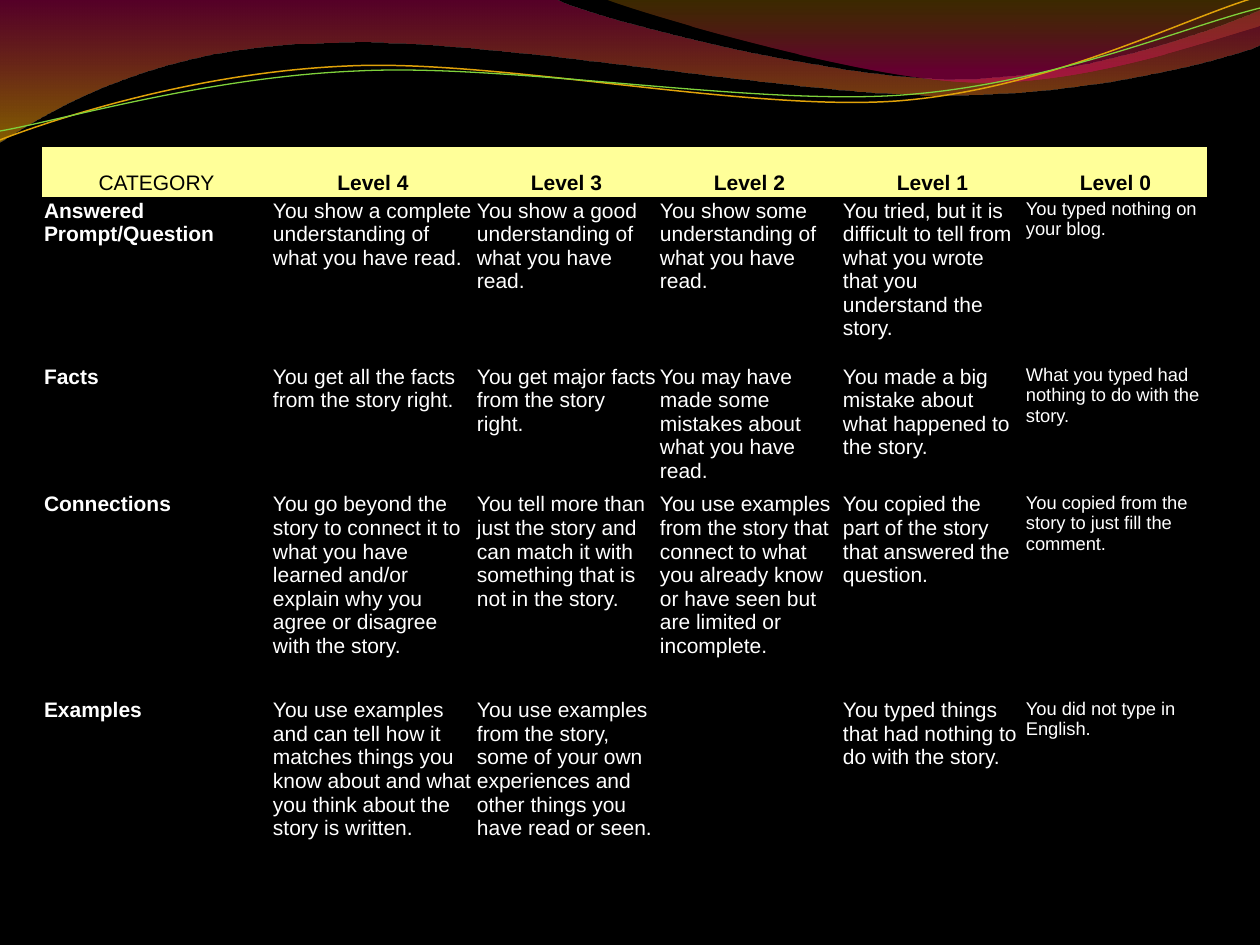
"""Build a slide with a wavy header and a rubric table for reading responses."""
from math import cos, radians, sin

from lxml import etree
from pptx import Presentation
from pptx.dml.color import RGBColor
from pptx.enum.text import MSO_ANCHOR, PP_ALIGN
from pptx.oxml.ns import qn
from pptx.oxml.xmlchemy import OxmlElement
from pptx.util import Pt

PX = 914400 / 126
FONT = "Arial"
NO_GRID_STYLE = "{2D5ABB26-0587-4C30-8999-92F81FD0307C}"
COLORS = {
    "black": "000000", "white": "FFFFFF", "header": "FFFF99",
    "plum": "BD0059", "amber": "F0AB00", "olive": "C38B00", "magenta": "E1006B",
    "gold": "E0A209", "green": "7FD13B",
}


def rgb(name):
    return RGBColor.from_string(COLORS[name])


def add_wave(slide, start, segments, close, tilt=0, center=(0, 0)):
    flat = list(start) + [value for segment in segments for value in segment]
    cx, cy = center
    turn_cos, turn_sin = cos(radians(-tilt)), sin(radians(-tilt))
    points = [((cx + (x - cx) * turn_cos - (y - cy) * turn_sin) * PX,
               (cy + (x - cx) * turn_sin + (y - cy) * turn_cos) * PX)
              for x, y in zip(flat[::2], flat[1::2])]
    builder = slide.shapes.build_freeform(*points[0], scale=1.0)
    builder.add_line_segments(points[1:], close=close)
    wave = builder.convert_to_shape()
    wave.rotation = tilt
    wave.shadow.inherit = False
    steps = iter(list(wave._element.spPr.iter(qn("a:lnTo"))))
    for segment in segments:
        first = next(steps)
        if len(segment) == 6:
            curve = OxmlElement("a:cubicBezTo")
            first.addprevious(curve)
            for step in (first, next(steps), next(steps)):
                curve.append(step[0])
                step.getparent().remove(step)
    return wave


prs = Presentation()
prs.slide_width, prs.slide_height = round(1260 * PX), round(945 * PX)
slide = prs.slides.add_slide(prs.slide_layouts[6])
slide.background.fill.solid()
slide.background.fill.fore_color.rgb = rgb("black")

ribbons = [
    ((0, 0),
     [(554, -1), (600, 21, 837, 79, 955, 79), (1075, 79, 1207, 33, 1260, 11),
      (1261, 45), (1239, 55, 1096, 96, 940, 95), (784, 95, 481, 35, 324, 43),
      (163, 45, 58, 105, -1, 142)],
     [(0, "plum", 45), (1, "amber", 55)]),
    ((604, -1),
     [(641, 14, 859, 78, 969, 82), (1079, 87, 1211, 40, 1260, 26), (1260, 0)],
     [(0, "olive", 30), (0.8, "magenta", 45)]),
]
for start, segments, stops in ribbons:
    ribbon = add_wave(slide, start, segments, True)
    ribbon.line.fill.background()
    ribbon.fill.gradient()
    ribbon.fill.gradient_angle = 270
    for stop, (position, color, opacity) in zip(ribbon.fill.gradient_stops, stops):
        stop.position = position
        stop.color.rgb = rgb(color)
    for tint, (position, color, opacity) in zip(ribbon._element.spPr.iter(qn("a:srgbClr")), stops):
        etree.SubElement(tint, qn("a:alpha")).set("val", str(opacity * 1000))

strands = [
    ((0, 140),
     [(60, 117, 199, 72, 349, 66), (498, 59, 747, 112, 898, 101),
      (1050, 89, 1182, 19, 1257, -3)],
     (629, 72), "gold", 0.85),
    ((0, 131),
     [(59, 121, 207, 77, 357, 71), (508, 63, 752, 106, 903, 95),
      (1053, 84, 1186, 26, 1260, 8)],
     (629, 74), "green", 0.75),
]
for start, segments, center, color, width in strands:
    strand = add_wave(slide, start, segments, False, -2.7, center)
    strand.fill.background()
    strand.line.color.rgb = rgb(color)
    strand.line.width = Pt(width)

rubric = [
    ["CATEGORY", "Level 4", "Level 3", "Level 2", "Level 1", "Level 0"],
    ["Answered Prompt/Question",
     "You show a complete understanding of what you have read.",
     "You show a good understanding of what you have read.",
     "You show some understanding of what you have read.",
     "You tried, but it is difficult to tell from what you wrote that you understand the story.",
     "You typed nothing on your blog."],
    ["Facts",
     "You get all the facts from the story right.",
     "You get major facts from the story right.",
     "You may have made some mistakes about what you have read.",
     "You made a big mistake about what happened to the story.",
     "What you typed had nothing to do with the story."],
    ["Connections",
     "You go beyond the story to connect it to what you have learned and/or explain why "
     "you agree or disagree with the story.",
     "You tell more than just the story and can match it with something that is not in the story.",
     "You use examples from the story that connect to what you already know or have seen "
     "but are limited or incomplete.",
     "You copied the part of the story that answered the question.",
     "You copied from the story to just fill the comment."],
    ["Examples",
     "You use examples and can tell how it matches things you know about and what you "
     "think about the story is written.",
     "You use examples from the story, some of your own experiences and other things you "
     "have read or seen.",
     "",
     "You typed things that had nothing to do with the story.",
     "You did not type in English."],
]
column_widths = [229, 204] + [183] * 4
row_heights = [50, 166, 128, 206, 206]
table = slide.shapes.add_table(
    len(row_heights), len(column_widths), round(42 * PX), round(147 * PX),
    round(sum(column_widths) * PX), round(sum(row_heights) * PX)).table
table._tbl.tblPr.find(qn("a:tableStyleId")).text = NO_GRID_STYLE
table.horz_banding = False
for column, width in zip(table.columns, column_widths):
    column.width = round(width * PX)
for row, height in zip(table.rows, row_heights):
    row.height = round(height * PX)

for r, entries in enumerate(rubric):
    for c, entry in enumerate(entries):
        cell = table.cell(r, c)
        cell.margin_left = cell.margin_right = cell.margin_top = cell.margin_bottom = round(2 * PX)
        is_header = r == 0
        if is_header:
            cell.fill.solid()
            cell.fill.fore_color.rgb = rgb("header")
            cell.vertical_anchor = MSO_ANCHOR.BOTTOM
        else:
            cell.fill.background()
        if not entry:
            continue
        paragraph = cell.text_frame.paragraphs[0]
        paragraph.alignment = PP_ALIGN.CENTER if is_header else PP_ALIGN.LEFT
        run = paragraph.add_run()
        run.text = entry
        run.font.name = FONT
        run.font.size = Pt(10.5 if c == 5 and not is_header else 12)
        run.font.bold = is_header != (c == 0)
        run.font.color.rgb = rgb("black" if is_header else "white")

prs.save("out.pptx")
